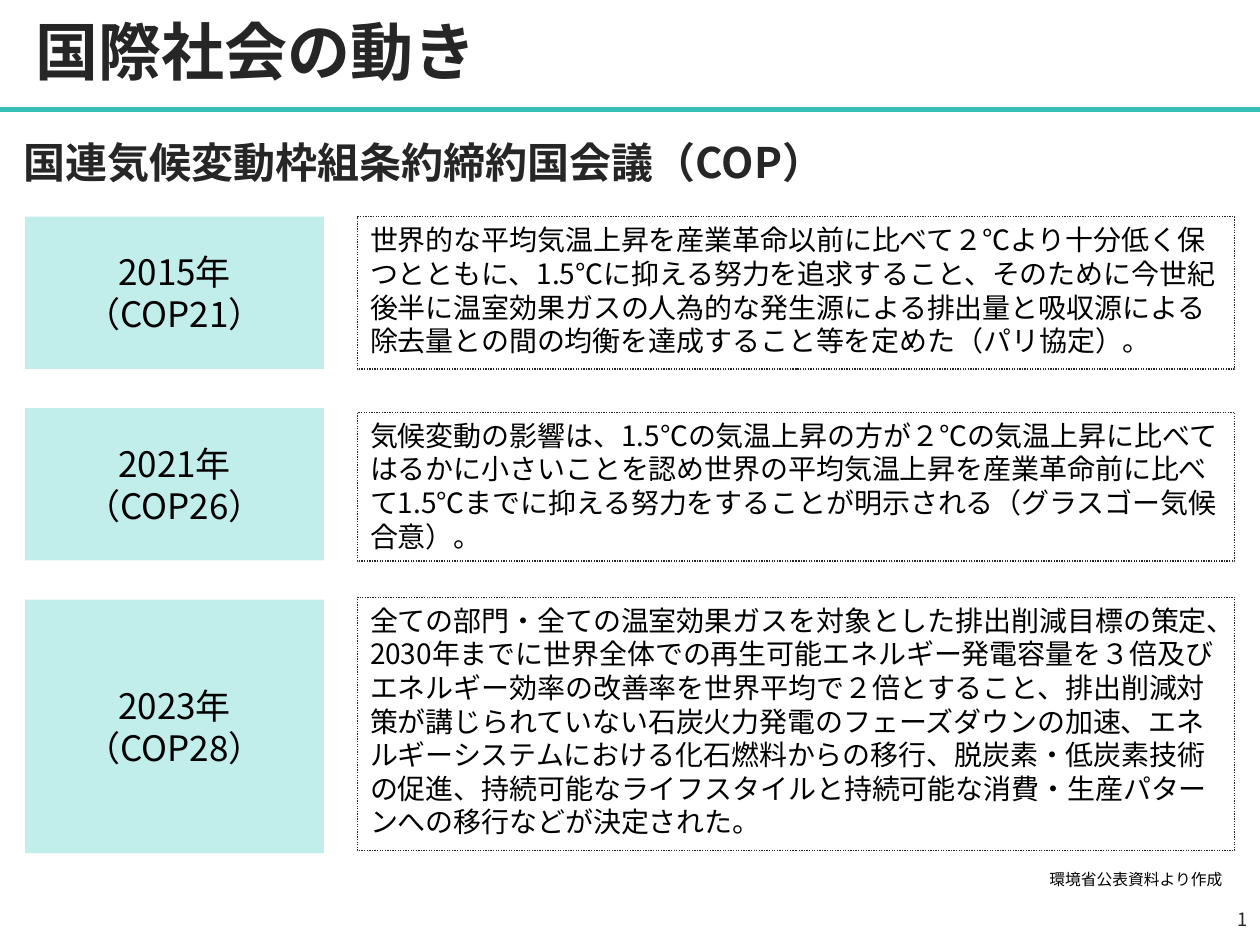
from lxml import etree
from pptx import Presentation
from pptx.dml.color import RGBColor
from pptx.enum import dml, lang, shapes, text
from pptx.oxml.ns import qn
from pptx.util import Cm, Pt

FONT = "Noto Sans CJK JP"
TEAL = RGBColor(0x37, 0xBF, 0xB9)
PALE_TEAL = RGBColor(0xC1, 0xED, 0xEB)
DARK = RGBColor(0x26, 0x26, 0x26)
BLACK = RGBColor(0, 0, 0)

TITLE = "国際社会の動き"
SUBTITLE = "国連気候変動枠組条約締約国会議（COP）"
CREDIT = "環境省公表資料より作成"
PAGE = "2"

# label, label height, detail top, detail height (cm), detail
MEETINGS = [
    ("2015年（COP21）", 3.07, 4.37, 3.07,
     "世界的な平均気温上昇を産業革命以前に比べて２℃より十分低く保つとともに、"
     "1.5℃に抑える努力を追求すること、そのために今世紀後半に温室効果ガスの人為的な"
     "発生源による排出量と吸収源による除去量との間の均衡を達成すること等を定めた（パリ協定）。"),
    ("2021年（COP26）", 3.07, 8.31, 3.0,
     "気候変動の影響は、1.5℃の気温上昇の方が２℃の気温上昇に比べてはるかに小さいことを認め"
     "世界の平均気温上昇を産業革命前に比べて1.5℃までに抑える努力をすることが明示される"
     "（グラスゴー気候合意）。"),
    ("2023年（COP28）", 5.11, 12.04, 5.11,
     "全ての部門・全ての温室効果ガスを対象とした排出削減目標の策定、2030年までに世界全体での"
     "再生可能エネルギー発電容量を３倍及びエネルギー効率の改善率を世界平均で２倍とすること、"
     "排出削減対策が講じられていない石炭火力発電のフェーズダウンの加速、エネルギーシステムに"
     "おける化石燃料からの移行、脱炭素・低炭素技術の促進、持続可能なライフスタイルと持続可能な"
     "消費・生産パターンへの移行などが決定された。"),
]
LABEL_LEFT, LABEL_WIDTH = 0.51, 6.02
DETAIL_LEFT, DETAIL_WIDTH = 7.21, 17.68
FIRST_TOP, LABEL_GAP = 4.37, 0.79
RULE_TOP = 2.21
HEADING_WIDTH = 24.43

LEFT, CENTER, RIGHT = text.PP_ALIGN.LEFT, text.PP_ALIGN.CENTER, text.PP_ALIGN.RIGHT
TOP, MIDDLE = text.MSO_ANCHOR.TOP, text.MSO_ANCHOR.MIDDLE


def write(shape, content, size, color, align=LEFT, anchor=TOP, bold=False):
    frame = shape.text_frame
    frame.text = content
    frame.word_wrap = True
    frame.auto_size = text.MSO_AUTO_SIZE.NONE
    frame.vertical_anchor = anchor
    paragraph = frame.paragraphs[0]
    paragraph.alignment = align
    run = paragraph.runs[0]
    font = run.font
    font.name, font.size, font.bold = FONT, Pt(size), bold
    font.color.rgb = color
    font.language_id = lang.MSO_LANGUAGE_ID.JAPANESE
    latin = font._element.find(qn("a:latin"))
    east_asian = etree.Element(qn("a:ea"), typeface=FONT)
    latin.addnext(east_asian)
    return paragraph


def add_text(slide, box, *args, **options):
    shape = slide.shapes.add_textbox(*map(Cm, box))
    return write(shape, *args, **options)


def add_box(slide, left, top, width, height):
    shape = slide.shapes.add_shape(
        shapes.MSO_SHAPE.RECTANGLE, Cm(left), Cm(top), Cm(width), Cm(height))
    shape.shadow.inherit = False
    return shape


def add_rule(slide, width):
    rule = slide.shapes.add_connector(
        shapes.MSO_CONNECTOR.STRAIGHT, 0, Cm(RULE_TOP), width, Cm(RULE_TOP))
    rule.line.color.rgb = TEAL
    rule.line.width = Pt(3)
    etree.SubElement(rule._element.spPr, qn("a:effectLst"))


def make_page_field(paragraph):
    """Turn the paragraph's run into a slide number field."""
    run = paragraph.runs[0]._r
    run.tag = qn("a:fld")
    run.set("id", "{B6F15528-21DE-4FAA-801E-634DDDAF4B2B}")
    run.set("type", "slidenum")


def main():
    presentation = Presentation()
    presentation.slide_width, presentation.slide_height = Cm(25.4), Cm(19.05)
    slide = presentation.slides.add_slide(presentation.slide_layouts[5])
    add_rule(slide, presentation.slide_width)

    title = slide.shapes.title
    title.left, title.top = Cm(0.46), Cm(0)
    title.width, title.height = Cm(HEADING_WIDTH), Cm(RULE_TOP)
    subtitle = slide.shapes.add_textbox(
        Cm(0.23), Cm(RULE_TOP), Cm(HEADING_WIDTH), Cm(RULE_TOP))
    for shape, content, size in ((title, TITLE, 36), (subtitle, SUBTITLE, 24)):
        heading = write(shape, content, size, DARK, anchor=MIDDLE, bold=True)
        heading.line_spacing = 0.9

    label_top = FIRST_TOP
    for name, label_height, detail_top, detail_height, summary in MEETINGS:
        label = add_box(slide, LABEL_LEFT, label_top, LABEL_WIDTH, label_height)
        label.fill.solid()
        label.fill.fore_color.rgb = PALE_TEAL
        label.line.fill.background()
        write(label, name, 20, BLACK, CENTER, MIDDLE)

        detail = add_box(slide, DETAIL_LEFT, detail_top, DETAIL_WIDTH, detail_height)
        detail.fill.background()
        detail.line.color.rgb = DARK
        detail.line.width = Pt(0.75)
        detail.line.dash_style = dml.MSO_LINE.ROUND_DOT
        write(detail, summary, 16, BLACK).space_before = Pt(2)
        label_top += label_height + LABEL_GAP

    add_text(slide, (13.21, 17.4, 11.68, 0.64), CREDIT, 9, BLACK, RIGHT)
    page = add_text(slide, (19.69, 18.03, 5.71, 1.02), PAGE, 10.5, DARK, RIGHT, MIDDLE)
    make_page_field(page)
    presentation.save("out.pptx")


if __name__ == "__main__":
    main()
